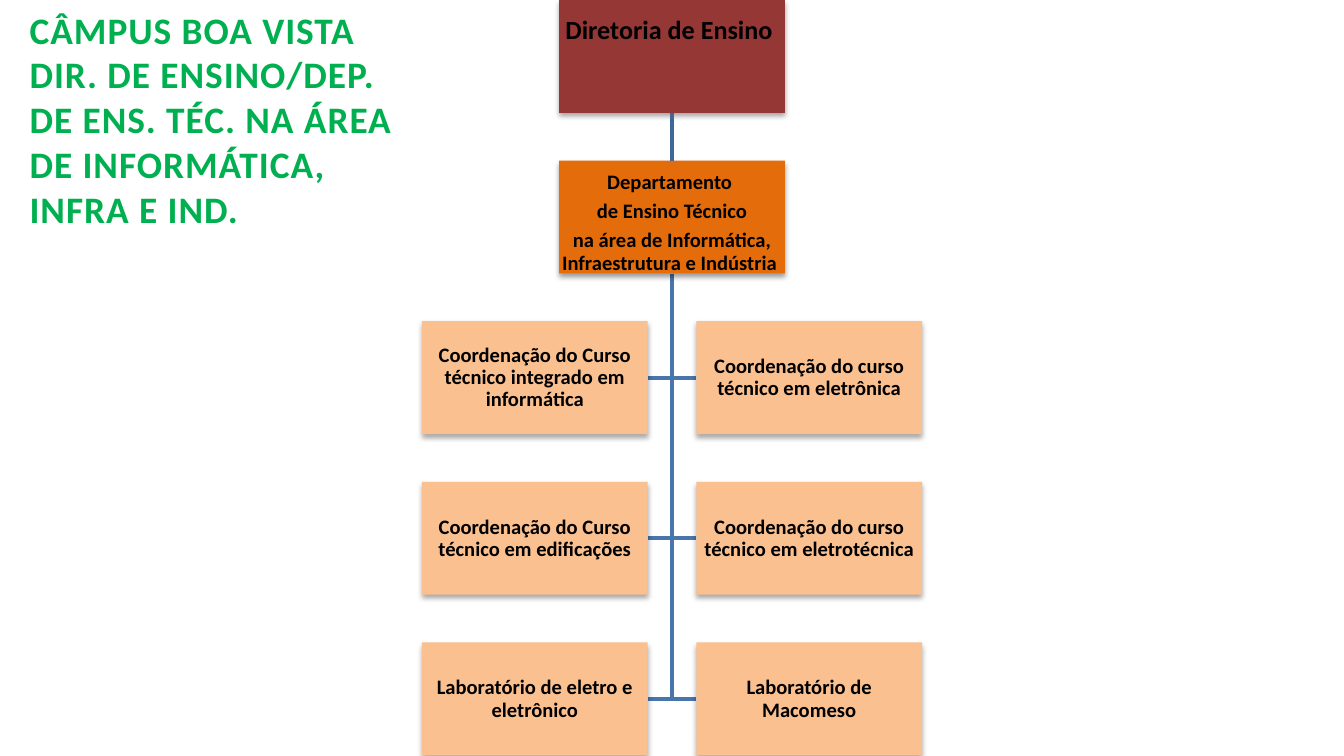
from lxml.etree import SubElement
from pptx import Presentation
from pptx.dml.color import RGBColor
from pptx.enum.shapes import MSO_CONNECTOR as Connector, MSO_SHAPE as Shape
from pptx.enum.text import MSO_ANCHOR as Anchor, MSO_AUTO_SIZE as AutoSize, PP_ALIGN as Align
from pptx.oxml.ns import qn
from pptx.util import Pt

FONT = "Calibri"
BOX_W, BOX_H = 121, 60.5
ROW_STEP = 86.05
CENTER_X = 360
SIDE_GAP = 13

TITLE = [
    "CÂMPUS BOA VISTA",
    "DIR. DE ENSINO/DEP. DE ENS. TÉC. NA ÁREA DE INFORMÁTICA, INFRA E IND.",
]
DEPARTMENT = [
    "Departamento ",
    "de Ensino Técnico",
    "na área de Informática, Infraestrutura e Indústria ",
]
UNIT_ROWS = [
    ("Coordenação do Curso técnico integrado em informática",
     "Coordenação do curso técnico em eletrônica"),
    ("Coordenação do Curso técnico em edificações",
     "Coordenação do curso técnico em eletrotécnica"),
    ("Laboratório de eletro e eletrônico",
     "Laboratório de Macomeso"),
]


def paint(color_format, hex_color):
    """Set a fill or font colour from a hex string."""
    color_format.rgb = RGBColor.from_string(hex_color)


def write(frame, lines, size, hex_color):
    """Write one bold run per paragraph and return the paragraphs."""
    for index, line in enumerate(lines):
        paragraph = frame.paragraphs[0] if index == 0 else frame.add_paragraph()
        run = paragraph.add_run()
        run.text = line
        run.font.name, run.font.size, run.font.bold = FONT, Pt(size), True
        paint(run.font.color, hex_color)
    return frame.paragraphs


def add_title(slide):
    """Place the heading at the top left in the title placeholder."""
    heading = slide.shapes.title
    heading.left, heading.top = Pt(8.64), Pt(0)
    heading.width, heading.height = Pt(227), Pt(128)
    frame = heading.text_frame
    frame.word_wrap = True
    frame.auto_size = AutoSize.NONE
    frame.vertical_anchor = Anchor.TOP
    for paragraph in write(frame, TITLE, 20, "00B050"):
        paragraph.alignment = Align.LEFT
        paragraph.runs[0].font._element.set("spc", "50")


def cast_shadow(box, opacity):
    """Give a box a soft shadow that falls straight down."""
    box.shadow.inherit = False
    effects = box._element.spPr.find(qn("a:effectLst"))
    shadow = SubElement(effects, qn("a:outerShdw"), blurRad=str(Pt(3.1)),
                        dist=str(Pt(1.8)), dir="5400000", rotWithShape="0")
    black = SubElement(shadow, qn("a:srgbClr"), val="000000")
    SubElement(black, qn("a:alpha"), val=str(opacity * 1000))


def add_box(slide, left, row, lines, fill, size=11, top_inset=None, opacity=35):
    """Draw a chart box, with text centred or hung from a top inset."""
    box = slide.shapes.add_shape(Shape.RECTANGLE, Pt(left), Pt(row * ROW_STEP),
                                 Pt(BOX_W), Pt(BOX_H))
    box.fill.solid()
    paint(box.fill.fore_color, fill)
    box.line.fill.background()
    cast_shadow(box, opacity)
    frame = box.text_frame
    frame.word_wrap = True
    frame.margin_left = frame.margin_right = Pt(0.5)
    frame.margin_top, frame.margin_bottom = Pt(top_inset or 0.5), Pt(0)
    frame.vertical_anchor = Anchor.TOP if top_inset else Anchor.MIDDLE
    paragraphs = write(frame, lines, size, "000000")
    for paragraph in paragraphs:
        paragraph.alignment = Align.CENTER
        paragraph.line_spacing = 0.9
    for paragraph in paragraphs[:-1]:
        paragraph.space_after = Pt(0.35 * size)
    return box


def add_branch(slide, row, side):
    """Draw the elbow from the department down to one unit."""
    start_y = ROW_STEP + BOX_H
    end_y = row * ROW_STEP + BOX_H / 2
    builder = slide.shapes.build_freeform(Pt(CENTER_X), Pt(start_y))
    builder.add_line_segments([(Pt(CENTER_X), Pt(end_y)),
                               (Pt(CENTER_X + side * SIDE_GAP), Pt(end_y))], close=False)
    branch = builder.convert_to_shape()
    branch.fill.background()
    paint(branch.line.color, "4875AC")
    branch.line.width = Pt(2)
    branch.shadow.inherit = False


def add_link(slide, upper, lower):
    """Join the bottom of one box to the top of the next."""
    link = slide.shapes.add_connector(Connector.STRAIGHT, 0, 0, 0, 0)
    link.begin_connect(upper, 2)
    link.end_connect(lower, 0)
    paint(link.line.color, "3F6797")
    link.line.width = Pt(2)
    SubElement(link._element.spPr, qn("a:effectLst"))


def main():
    """Build the organisation chart slide."""
    deck = Presentation()
    deck.slide_width, deck.slide_height = Pt(720), Pt(405)
    slide = deck.slides.add_slide(deck.slide_layouts[5])
    add_title(slide)

    for row in range(2, 2 + len(UNIT_ROWS)):
        for side in (-1, 1):
            add_branch(slide, row, side)

    middle = CENTER_X - BOX_W / 2
    board = add_box(slide, middle, 0, ["Diretoria de Ensino "], "953735",
                    size=14, top_inset=9)
    department = add_box(slide, middle, 1, DEPARTMENT, "E46C0A",
                         top_inset=5.8, opacity=38)
    add_link(slide, board, department)

    columns = (CENTER_X - SIDE_GAP - BOX_W, CENTER_X + SIDE_GAP)
    for row, units in enumerate(UNIT_ROWS, start=2):
        for left, unit in zip(columns, units):
            add_box(slide, left, row, [unit], "FAC090")

    deck.save("out.pptx")


if __name__ == "__main__":
    main()
